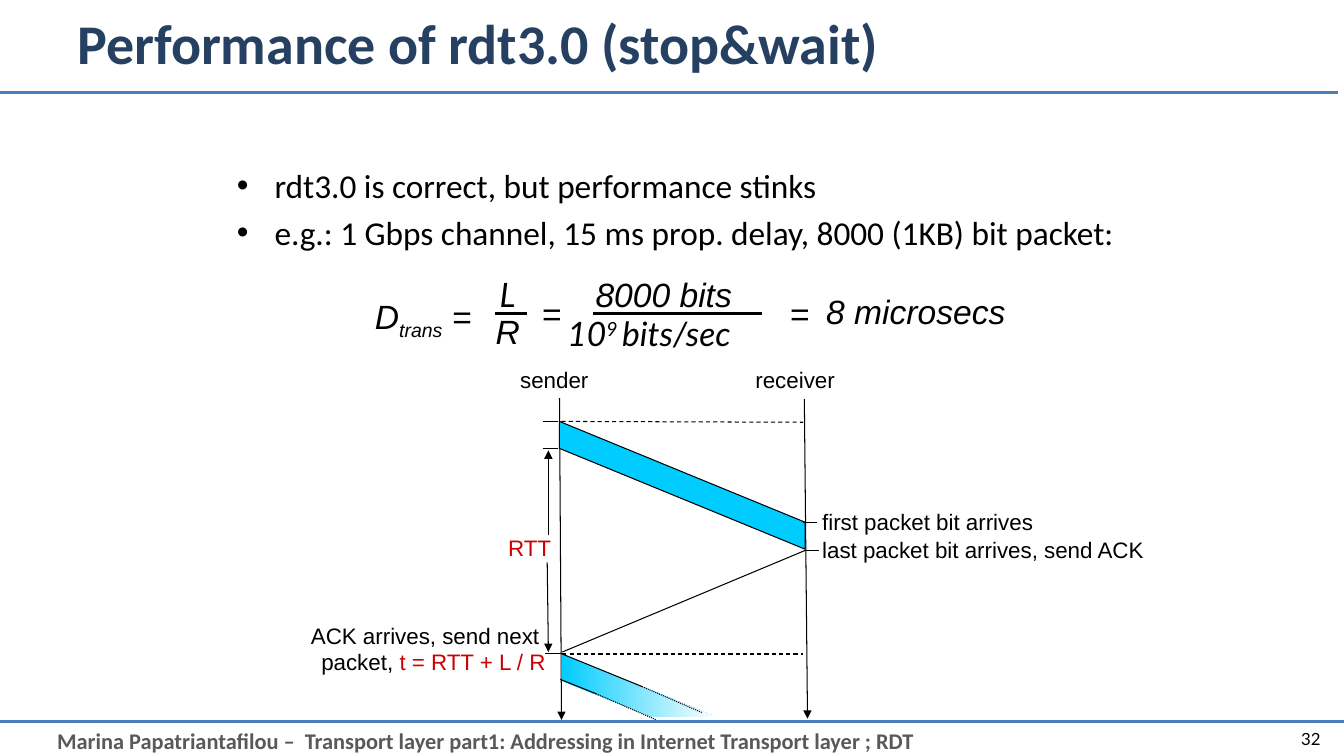
"""Build the slide on the performance of the stop-and-wait protocol rdt3.0."""
from lxml.etree import SubElement
from pptx import Presentation
from pptx.dml.color import RGBColor
from pptx.enum.dml import MSO_LINE
from pptx.enum.shapes import MSO_CONNECTOR
from pptx.enum.text import MSO_ANCHOR, PP_ALIGN
from pptx.oxml.ns import qn
from pptx.util import Cm, Pt

BLACK = RGBColor(0x00, 0x00, 0x00)
WHITE = RGBColor(0xFF, 0xFF, 0xFF)
NAVY = RGBColor(0x25, 0x40, 0x61)
BLUE = RGBColor(0x4B, 0x7E, 0xBC)
GRAY = RGBColor(0x59, 0x59, 0x59)
RED = RGBColor(0xCC, 0x00, 0x00)
CYAN = RGBColor(0x00, 0xCC, 0xFF)

deck = Presentation()
deck.slide_width, deck.slide_height = Cm(33.87), Cm(19.05)
page = deck.slides.add_slide(deck.slide_layouts[6])


def add_text(place, lines, size, name="Arial", color=BLACK, bold=False,
             italic=False, align=PP_ALIGN.LEFT, wrap=True):
    """Add a text box with one paragraph per line and return it."""
    box = page.shapes.add_textbox(*map(Cm, place))
    box.text_frame.word_wrap = wrap
    for index, line in enumerate(lines):
        frame = box.text_frame
        para = frame.paragraphs[0] if index == 0 else frame.add_paragraph()
        para.text = line
        para.alignment = align
        para.font.size, para.font.name = Pt(size), name
        para.font.bold, para.font.italic = bold, italic
        para.font.color.rgb = color
    return box


def add_line(start, end, color=BLACK, width=0.75, dash=None, arrow=False):
    """Add a straight line, with an arrowhead at its end if wanted."""
    line = page.shapes.add_connector(MSO_CONNECTOR.STRAIGHT, *map(Cm, start + end))
    line.line.color.rgb = color
    line.line.width = Pt(width)
    if dash:
        line.line.dash_style = dash
    if arrow:
        SubElement(line.line._get_or_add_ln(), qn("a:tailEnd"), type="triangle")
    SubElement(line._element.spPr, qn("a:effectLst"))


# Header, footer and bullets
add_line((0, 18.19), (33.87, 18.19), BLUE, 2.25)
add_line((0, 2.34), (33.73, 2.34), BLUE, 2.25)
add_text((1.19, 18.21, 31.34, 0.94),
         ["Marina Papatriantafilou –  Transport layer part1: Addressing in Internet Transport layer ; RDT"],
         16, "Calibri", GRAY, bold=True)
number = add_text((30.81, 18.11, 2.72, 1.02), ["32"], 12, "Lato", align=PP_ALIGN.RIGHT)
title = add_text((1.7, 0, 30.43, 2.11), ["Performance of rdt3.0 (stop&wait)"],
                 40, "Calibri", NAVY, bold=True)
for box in (number, title):
    box.text_frame.vertical_anchor = MSO_ANCHOR.MIDDLE

bullets = add_text((5.72, 4.04, 23.27, 2.74),
                   ["rdt3.0 is correct, but performance stinks",
                    "e.g.: 1 Gbps channel, 15 ms prop. delay, 8000 (1KB) bit packet:"],
                   23.8, "Calibri")
for para in bullets.text_frame.paragraphs:
    para.space_before = Pt(4.8)
    properties = para._p.get_or_add_pPr()
    properties.set("marL", str(Cm(0.95)))
    properties.set("indent", str(Cm(-0.95)))
    bullet_font = properties.makeelement(qn("a:buFont"), {"typeface": "Arial"})
    bullet = properties.makeelement(qn("a:buChar"), {"char": "•"})
    properties.find(qn("a:spcBef")).addnext(bullet_font)
    bullet_font.addnext(bullet)

# Transmission delay formula
for place, text, name, italic in (
    ((12.34, 6.78, 0.94, 1.27), "L", "Lato", True),
    ((12.24, 7.7, 1.12, 1.27), "R", "Arial", True),
    ((14.76, 6.78, 3.96, 1.27), "8000 bits", "Arial", True),
    ((13.41, 7.26, 1.02, 1.27), "=", "Arial", False),
    ((19.66, 7.26, 1.02, 1.27), "=", "Arial", False),
    ((20.57, 7.21, 5.03, 1.27), "8 microsecs", "Arial", True),
):
    add_text(place, [text], 24, name, italic=italic, wrap=False)
for place, name, wrap, pieces in (
    ((9.2, 7.32, 3.1, 1.27), "Arial", False, (("D", 0), ("trans", -25), (" =", 0))),
    ((14.05, 7.77, 5.41, 1.27), "Lato", True, (("10", 0), ("9 ", 30), ("bits/sec", 0))),
):
    box = add_text(place, [""], 24, name, italic=True, wrap=wrap)
    for text, shift in pieces:
        span = box.text_frame.paragraphs[0].add_run()
        span.text = text
        if shift:
            span._r.get_or_add_rPr().set("baseline", str(shift * 1000))
for left, right in ((12.47, 13.28), (14.94, 19.2)):
    add_line((left, 7.9), (right, 7.9), width=1.5)

# Time axes
add_line((14.1, 10.03), (14.15, 18.14), arrow=True)
add_line((20.27, 10.06), (20.35, 18.11), arrow=True)
for place, text in (((12.62, 9.09, 2.46, 0.97), "sender"),
                    ((18.67, 9.09, 2.62, 0.97), "receiver")):
    add_text(place, [text], 16, align=PP_ALIGN.RIGHT)
add_line((14.15, 10.62), (20.24, 10.64), dash=MSO_LINE.DASH)
add_line((14.17, 16.48), (20.24, 16.48), dash=MSO_LINE.DASH)

# Packets and acknowledgement
add_line((14.17, 16.43), (20.29, 13.87))
packets = []
for corners in (
    ((14.1, 10.62), (20.29, 13.16), (20.29, 13.84), (14.1, 11.3)),
    ((14.15, 16.48), (18.08, 18.08), (16.48, 18.08), (14.15, 17.15)),
):
    points = [(Cm(x), Cm(y)) for x, y in corners]
    outline = page.shapes.build_freeform(*points[0])
    outline.add_line_segments(points[1:])
    packet = outline.convert_to_shape()
    packet.shadow.inherit = False
    packets.append(packet)
first_packet, next_packet = packets
first_packet.fill.solid()
first_packet.fill.fore_color.rgb = CYAN
first_packet.line.color.rgb = BLACK
first_packet.line.width = Pt(0.75)
next_packet.fill.gradient()
next_packet.fill.gradient_angle = 0
for stop, position, color in zip(next_packet.fill.gradient_stops, (0, 1), (CYAN, WHITE)):
    stop.position = position
    stop.color.rgb = color
next_packet.line.fill.background()
for start, middle, end in (
    ((14.12, 16.46), (16.18, 17.3), (17.7, 17.96)),
    ((14.12, 17.12), (15.02, 17.48), (16.54, 18.14)),
):
    add_line(start, middle)
    add_line(middle, end, dash=MSO_LINE.ROUND_DOT)

# Time marks and the round trip
for left, right, y in ((13.69, 14.07, 10.62), (13.69, 14.07, 11.3), (13.74, 14.1, 16.46),
                       (20.24, 20.6, 13.16), (20.29, 20.65, 13.87)):
    add_line((left, y), (right, y))
add_line((13.79, 14.17), (13.82, 16.43), arrow=True)
add_line((13.82, 13.49), (13.82, 11.35), arrow=True)
add_text((11.89, 13.34, 2.25, 0.94), ["RTT"], 16, color=RED, align=PP_ALIGN.RIGHT)
add_text((20.47, 12.67, 6.73, 0.99), ["first packet bit arrives"], 16)
add_text((20.47, 13.39, 8.66, 1.57), ["last packet bit arrives, send ACK"], 16)
acknowledged = add_text((6.53, 15.54, 7.47, 1.75), ["ACK arrives, send next ", "packet, "],
                        16, align=PP_ALIGN.RIGHT)
span = acknowledged.text_frame.paragraphs[1].add_run()
span.text = "t = RTT + L / R"
span.font.color.rgb = RED

deck.save("out.pptx")
